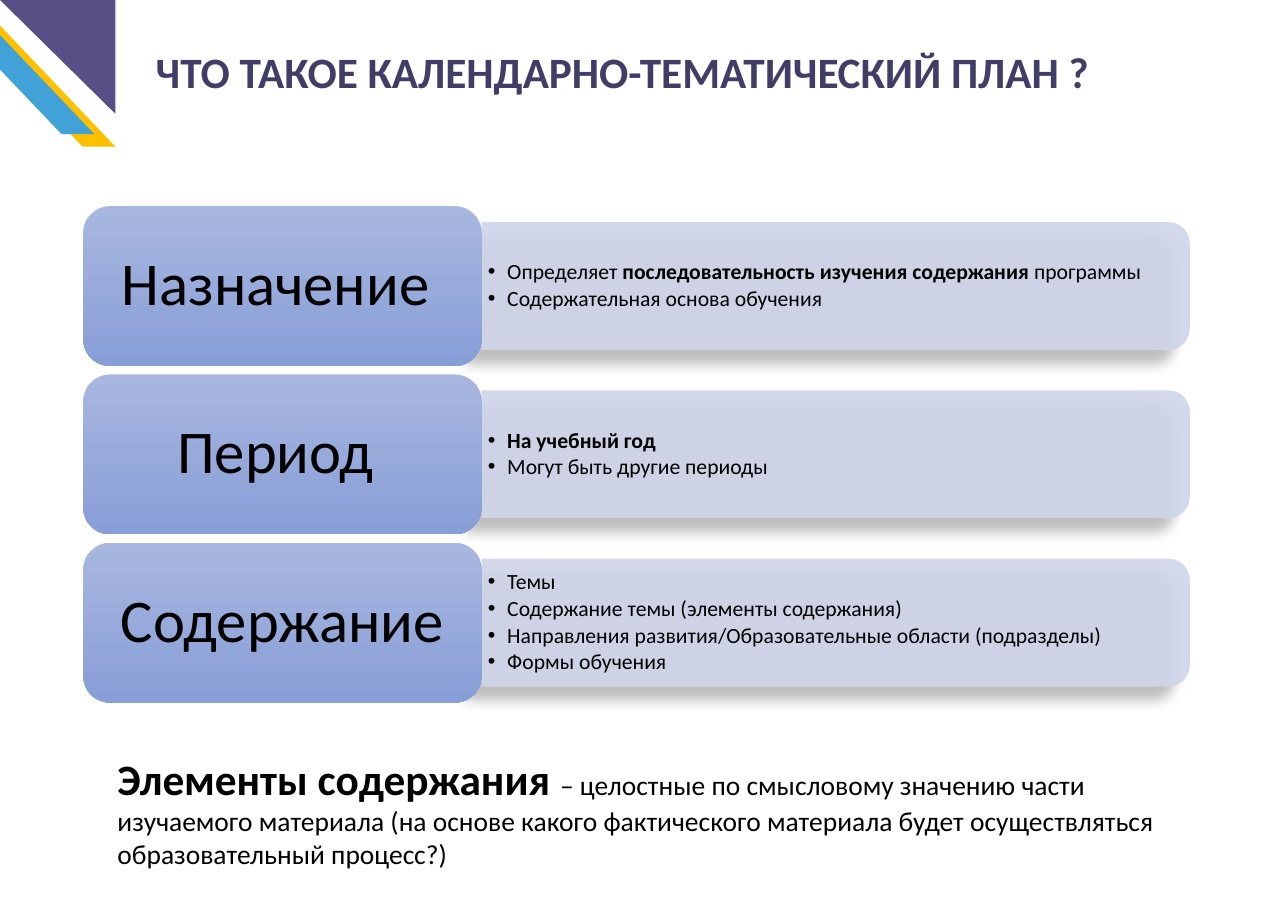
from lxml import etree
from pptx import Presentation
from pptx import util as u
from pptx.dml.color import RGBColor
from pptx.enum import shapes, text
from pptx.oxml import ns

COLORS = {"gold": "FFC000", "sky": "41A2D8", "plum": "565087", "title": "423D67",
          "black": "000000", "panel": "CFD5EA", "top": "A8B7DF", "base": "889ED7"}
FONT = "Calibri"
KIND = shapes.MSO_SHAPE

TITLE = "ЧТО ТАКОЕ КАЛЕНДАРНО-ТЕМАТИЧЕСКИЙ ПЛАН ?"
ROWS = [
    ("Назначение ", [
        [("Определяет ", False), ("последовательность изучения содержания", True),
         (" программы", False)],
        [("Содержательная основа обучения", False)]]),
    ("Период ", [
        [("На учебный год", True)],
        [("Могут быть другие периоды", False)]]),
    ("Содержание ", [
        [("Темы", False)],
        [("Содержание темы (элементы содержания)", False)],
        [("Направления развития/Образовательные области (подразделы)", False)],
        [("Формы обучения", False)]]),
]
TERM = "Элементы содержания "
NOTE = ("– целостные по смысловому значению части изучаемого материала "
        "(на основе какого фактического материала будет осуществляться "
        "образовательный процесс?)")
CORNER = [
    (KIND.PARALLELOGRAM, (-0.79, -0.06, 2.27, 1.94), "gold", ["flipH"], 0.953),
    (KIND.PARALLELOGRAM, (-1.06, -0.22, 2.27, 1.94), "sky", ["flipH"], 0.953),
    (KIND.RIGHT_TRIANGLE, (0, 0, 1.48, 1.46), "plum", ["flipH", "flipV"], None),
]

FIRST, PITCH = 3.67, 2.16
LEFT, LABEL_W, LABEL_H = 1.07, 5.11, 2.05
PANEL_W, PANEL_H = 9.09, 1.64

deck = Presentation()
deck.slide_width, deck.slide_height = u.Inches(16.53), u.Inches(11.69)
slide = deck.slides.add_slide(deck.slide_layouts[6])


def color(name):
    return RGBColor.from_string(COLORS[name])


def add(parent, tag, **attrs):
    return etree.SubElement(parent, ns.qn(tag), {k: str(v) for k, v in attrs.items()})


def draw(kind, box, fill=None):
    shape = slide.shapes.add_shape(kind, *map(u.Inches, box))
    shape.shadow.inherit = False
    shape.line.fill.background()
    if fill:
        shape.fill.solid()
        shape.fill.fore_color.rgb = color(fill)
    return shape


def write(paras, box=None, shape=None, size=20, ink="black", inset=(0.1, 0.05),
          anchor="TOP", align="LEFT", space=1, after=0, bullet=False):
    shape = shape or slide.shapes.add_textbox(*map(u.Inches, box))
    frame = shape.text_frame
    frame.word_wrap = True
    frame.vertical_anchor = text.MSO_ANCHOR[anchor]
    frame.margin_left = frame.margin_right = u.Inches(inset[0])
    frame.margin_top = frame.margin_bottom = u.Inches(inset[1])
    for i, runs in enumerate(paras):
        para = frame.add_paragraph() if i else frame.paragraphs[0]
        para.alignment = text.PP_ALIGN[align]
        para.line_spacing = space
        para.space_after = u.Pt(after)
        if bullet:
            props = para._p.get_or_add_pPr()
            props.set("marL", str(u.Inches(0.25)))
            props.set("indent", str(u.Inches(-0.25)))
            add(props, "a:buFont", typeface="Arial")
            add(props, "a:buChar", char="•")
        for words, bold, *own in runs:
            run = para.add_run()
            run.text = words
            run.font.name = FONT
            run.font.size = u.Pt(own[0] if own else size)
            run.font.bold = bold
            run.font.color.rgb = color(ink)


def cast(shape):
    props = shape._element.spPr
    tint = props.find(ns.qn("a:solidFill"))[0]
    add(tint, "a:alpha", val=90000)
    glow = add(props.find(ns.qn("a:effectLst")), "a:outerShdw", blurRad=u.Pt(11.8),
               dist=u.Pt(19.7), dir=141 * 60000, algn="ctr", rotWithShape=0)
    shade = add(glow, "a:srgbClr", val=COLORS["black"])
    add(shade, "a:alpha", val=28000)


def row(mid, label, points):
    right = LEFT + LABEL_W
    panel = draw(KIND.ROUND_2_SAME_RECTANGLE,
                 (right + (PANEL_W - PANEL_H) / 2, mid - PANEL_W / 2, PANEL_H, PANEL_W),
                 "panel")
    panel.rotation = 90
    cast(panel)
    write(points, box=(right, mid - 0.74, 9.01, 1.48), inset=(0.08, 0.04),
          anchor="MIDDLE", space=0.9, after=3, bullet=True)
    card = draw(KIND.ROUNDED_RECTANGLE, (LEFT, mid - LABEL_H / 2, LABEL_W, LABEL_H))
    card.fill.gradient()
    card.fill.gradient_angle = 270
    for stop, name in zip(card.fill.gradient_stops, ("top", "base")):
        stop.color.rgb = color(name)
    write([[(label, False)]], shape=card, size=56, inset=(0.33, 0.22),
          anchor="MIDDLE", align="CENTER", space=0.9)


for kind, box, fill, flips, bend in CORNER:
    piece = draw(kind, box, fill)
    for flip in flips:
        piece._element.spPr.xfrm.set(flip, "1")
    if bend:
        piece.adjustments[0] = bend

write([[(TITLE, True)]], box=(1.9, 0.53, 13.37, 0.77), size=40, ink="title")
for i, (label, points) in enumerate(ROWS):
    row(FIRST + i * PITCH, label, points)
write([[(TERM, True, 40), (NOTE, False)]], box=(1.41, 9.6, 14.23, 1.63), size=25.4)

deck.save("out.pptx")
